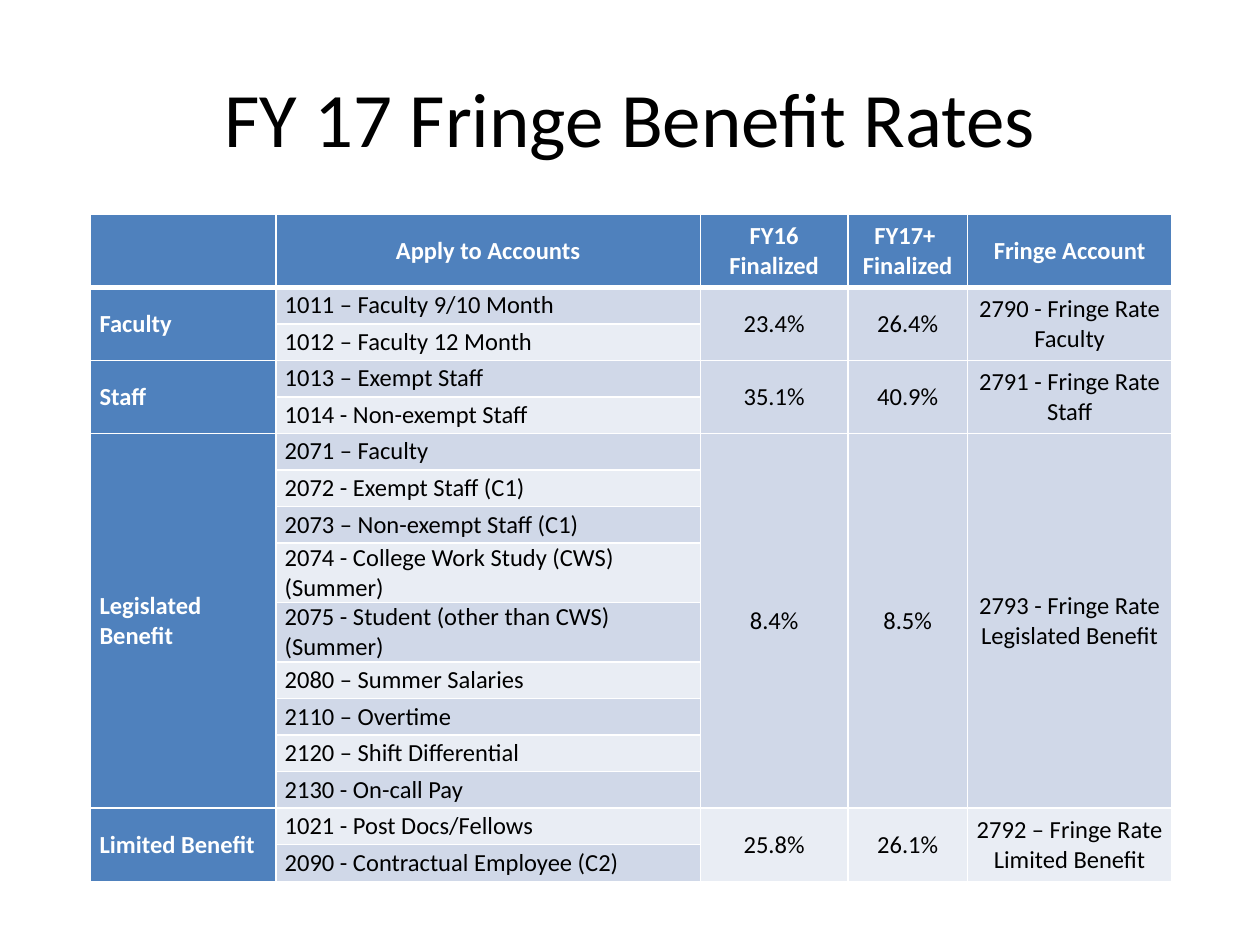
from dataclasses import dataclass

from lxml.etree import SubElement
from pptx import Presentation
from pptx.dml.color import RGBColor
from pptx.enum.text import MSO_ANCHOR, PP_ALIGN
from pptx.oxml.ns import qn
from pptx.util import Inches, Pt


@dataclass(frozen=True)
class Theme:
    font: str = "Calibri"
    title_size: int = 44
    table_size: int = 14
    text: str = "000000"
    white: str = "FFFFFF"
    accent: str = "4F81BD"
    bands: tuple = ("D0D8E8", "E9EDF4")
    rule: int = 1
    header_rule: int = 3


THEME = Theme()

COL_WIDTHS = (1.47, 3.37, 1.17, 0.95, 1.62)
HEADER_HEIGHT, ROW_HEIGHT = 0.58, 0.29
HEADERS = ([], ["Apply to Accounts"], ["FY16", "Finalized"],
           ["FY17+ ", "Finalized"], ["Fringe Account"])

# Employee group, its accounts, FY16 rate, FY17 rate, fringe account
GROUPS = (
    ("Faculty",
     ("1011 – Faculty 9/10 Month", "1012 – Faculty 12 Month"),
     "23.4%", "26.4%", "2790 - Fringe Rate Faculty"),
    ("Staff",
     ("1013 – Exempt Staff", "1014 - Non-exempt Staff"),
     "35.1%", "40.9%", "2791 - Fringe Rate Staff"),
    ("Legislated Benefit",
     ("2071 – Faculty", "2072 - Exempt Staff (C1)",
      "2073 – Non-exempt Staff (C1)",
      "2074 - College Work Study (CWS) (Summer)",
      "2075 - Student (other than CWS) (Summer)",
      "2080 – Summer Salaries", "2110 – Overtime",
      "2120 – Shift Differential", "2130 - On-call Pay"),
     "8.4%", "8.5%", "2793 - Fringe Rate Legislated Benefit"),
    ("Limited Benefit",
     ("1021 - Post Docs/Fellows", "2090 - Contractual Employee (C2)"),
     "25.8%", "26.1%", "2792 – Fringe Rate Limited Benefit"),
)


def add_run(p, text, size, color, bold=False):
    r = p.add_run()
    r.text = text
    r.font.name = THEME.font
    r.font.size = Pt(size)
    r.font.bold = bold
    r.font.color.rgb = RGBColor.from_string(color)


def add_title(s, text):
    title = s.shapes.title
    title.left, title.top = Inches(0.5), Inches(0.3)
    title.width, title.height = Inches(9), Inches(1.25)
    tf = title.text_frame
    tf.vertical_anchor = MSO_ANCHOR.MIDDLE
    p = tf.paragraphs[0]
    p.alignment = PP_ALIGN.CENTER
    add_run(p, text, THEME.title_size, THEME.text)


def set_borders(cell, top, bottom):
    tc_pr = cell._tc.get_or_add_tcPr()
    widths = {"a:lnL": THEME.rule, "a:lnR": THEME.rule,
              "a:lnT": top, "a:lnB": bottom}
    for tag, width in widths.items():
        ln = SubElement(tc_pr, qn(tag), w=str(Pt(width)))
        fill = SubElement(ln, qn("a:solidFill"))
        SubElement(fill, qn("a:srgbClr"), val=THEME.white)


def style_cell(cell, row, fill):
    # The heavy rule lies between the header and the first body row
    set_borders(cell,
                THEME.header_rule if row == 1 else THEME.rule,
                THEME.header_rule if row == 0 else THEME.rule)
    cell.fill.solid()
    cell.fill.fore_color.rgb = RGBColor.from_string(fill)
    cell.vertical_anchor = MSO_ANCHOR.MIDDLE
    cell.margin_left = cell.margin_right = Inches(0.07)
    cell.margin_top = cell.margin_bottom = 0


def write_cell(cell, lines, color, bold=False, align=PP_ALIGN.CENTER):
    tf = cell.text_frame
    for i, line in enumerate(lines):
        p = tf.add_paragraph() if i else tf.paragraphs[0]
        p.alignment = align
        add_run(p, line, THEME.table_size, color, bold)


def add_group(table, first, group):
    name, accounts, *shared = group
    last = first + len(accounts) - 1
    for col in (0, 2, 3, 4):
        table.cell(first, col).merge(table.cell(last, col))
    write_cell(table.cell(first, 0), [name], THEME.white, True, PP_ALIGN.LEFT)
    for row, account in enumerate(accounts, first):
        write_cell(table.cell(row, 1), [account], THEME.text,
                   align=PP_ALIGN.LEFT)
    for col, value in enumerate(shared, 2):
        write_cell(table.cell(first, col), [value], THEME.text)
    return last + 1


def add_rates_table(s):
    count = sum(len(group[1]) for group in GROUPS)
    table = s.shapes.add_table(
        count + 1, len(COL_WIDTHS), Inches(0.72), Inches(1.7),
        Inches(sum(COL_WIDTHS)),
        Inches(HEADER_HEIGHT + count * ROW_HEIGHT)).table
    for column, width in zip(table.columns, COL_WIDTHS):
        column.width = Inches(width)

    # Row heights, banded fills and rules
    for i, row in enumerate(table.rows):
        row.height = Inches(ROW_HEIGHT if i else HEADER_HEIGHT)
        for j, cell in enumerate(row.cells):
            band = THEME.bands[(i - 1) % 2]
            style_cell(cell, i, THEME.accent if i == 0 or j == 0 else band)

    # Header, then one merged block per employee group
    for col, lines in enumerate(HEADERS):
        write_cell(table.cell(0, col), lines, THEME.white, True)
    row = 1
    for group in GROUPS:
        row = add_group(table, row, group)


def main():
    prs = Presentation()
    prs.slide_width, prs.slide_height = Inches(10), Inches(7.5)
    s = prs.slides.add_slide(prs.slide_layouts[5])
    add_title(s, "FY 17 Fringe Benefit Rates")
    add_rates_table(s)
    prs.save("out.pptx")


if __name__ == "__main__":
    main()
